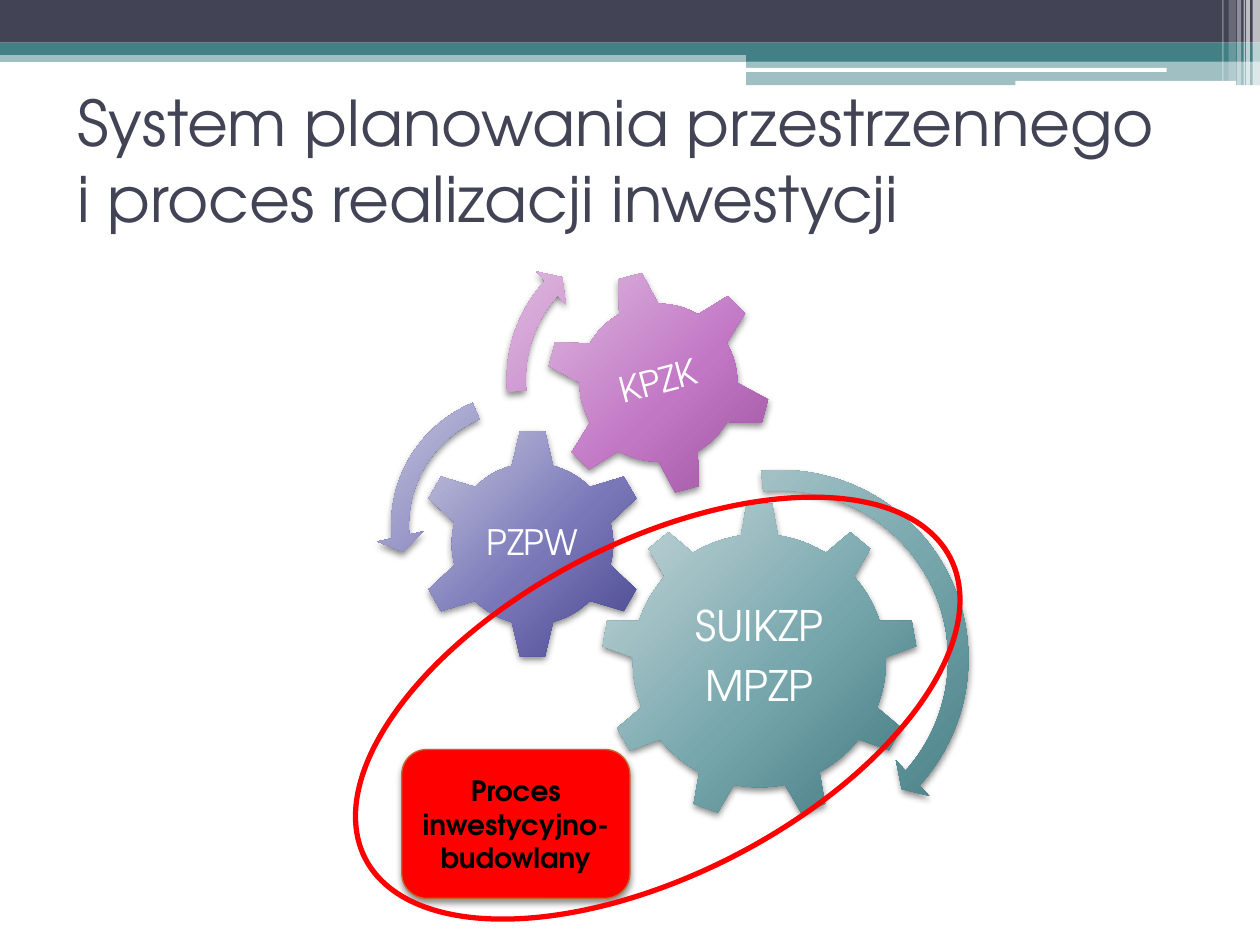
import pptx
import pptx.dml.color
import pptx.enum.shapes
import pptx.enum.text
import pptx.oxml
import pptx.oxml.ns
import pptx.util

Cm = pptx.util.Cm
Pt = pptx.util.Pt
SHAPE = pptx.enum.shapes.MSO_SHAPE
ALIGN = pptx.enum.text.PP_ALIGN
ANCHOR = pptx.enum.text.MSO_ANCHOR
FONT = "TeX Gyre Adventor"
TEAL = ("C7D7DA", "77A7AD", "3E777D")
VIOLET = ("C7C7DE", "7977B8", "45438A")
PINK = ("E2C6E3", "C277C5", "954898")


def rgb(color):
    """Return the colour of a hex string."""
    return pptx.dml.color.RGBColor.from_string(color)


def xml(body):
    """Parse a drawing element given without its namespace declaration."""
    tag, rest = body.split(" ", 1)
    return pptx.oxml.parse_xml(f"{tag} {pptx.oxml.ns.nsdecls('a')} {rest}")


def add_shape(slide, kind, x, y, w, h, fill=None, alpha=100, rotation=0):
    """Add a shape without line or shadow, with an optional solid fill."""
    sp = slide.shapes.add_shape(kind, Cm(x), Cm(y), Cm(w), Cm(h))
    sp.shadow.inherit = False
    sp.line.fill.background()
    sp.rotation = rotation
    if fill:
        sp.fill.solid()
        sp.fill.fore_color.rgb = rgb(fill)
        if alpha < 100:
            clr = sp._element.spPr.find(".//" + pptx.oxml.ns.qn("a:srgbClr"))
            clr.append(xml(f'<a:alpha val="{alpha * 1000}"/>'))
    return sp


def add_shadow(sp):
    """Give a shape a soft shadow below it."""
    effects = sp._element.spPr.find(pptx.oxml.ns.qn("a:effectLst"))
    effects.append(xml(
        '<a:outerShdw blurRad="50800" dist="25400" dir="5400000" rotWithShape="0">'
        '<a:srgbClr val="000000"><a:alpha val="45000"/></a:srgbClr></a:outerShdw>'))


def add_gradient(sp, colors):
    """Fill a shape with a three-stop gradient from its upper left."""
    stops = "".join(f'<a:gs pos="{pos}000"><a:srgbClr val="{c}"/></a:gs>'
                    for pos, c in zip((0, 55, 100), colors))
    geom = sp._element.spPr.find(pptx.oxml.ns.qn("a:prstGeom"))
    geom.addnext(xml(
        f'<a:gradFill rotWithShape="1"><a:gsLst>{stops}</a:gsLst><a:path path="circle">'
        '<a:fillToRect l="-40000" t="-90000" r="140000" b="190000"/></a:path></a:gradFill>'))


def set_text(sp, lines, size, color, bold=False):
    """Write centred paragraphs into a shape and return them."""
    tf = sp.text_frame
    tf.word_wrap = True
    tf.vertical_anchor = ANCHOR.MIDDLE
    tf.text = "\n".join(lines)
    for p in tf.paragraphs:
        p.alignment = ALIGN.CENTER
        p.font.name, p.font.size, p.font.bold = FONT, Pt(size), bold
        p.font.color.rgb = rgb(color)
    return tf.paragraphs


def add_header(slide, x, y, w):
    """Draw the header bands, the white bars and the stripes at the right end."""
    half = 15.04
    for dx, dy, bw, bh, color, alpha in (
            (0, 1.02, w, 0.23, "438086", 50),
            (0, 0, w, 0.86, "424456", 100),
            (0, 0.86, w, 0.25, "438086", 100),
            (half, 0.99, w - half, 0.25, "438086", 100),
            (half, 1.22, w - half, 0.5, "438086", 50)):
        add_shape(slide, SHAPE.RECTANGLE, x + dx, y + dy, bw, bh, color, alpha)
    for dx, dy, bw, bh in ((15.01, 1.37, 8.51, 0.08), (20.47, 1.63, 4.45, 0.1)):
        add_shape(slide, SHAPE.ROUNDED_RECTANGLE, x + dx, y + dy, bw, bh, "FFFFFF")
    for dx, sw, sh, alpha in (
            (25.25, 0.15, 1.73, 65), (25.12, 0.08, 1.73, 65), (25.07, 0.03, 1.73, 60),
            (24.94, 0.08, 1.73, 40), (24.77, 0.15, 1.63, 20), (24.64, 0.03, 1.63, 30)):
        add_shape(slide, SHAPE.RECTANGLE, x + dx, y, sw, sh, "FFFFFF", alpha)


def add_title(slide, x, y, w, h):
    """Place and format the title placeholder."""
    s = slide.shapes.title
    s.left, s.top, s.width, s.height = Cm(x), Cm(y), Cm(w), Cm(h)
    tf = s.text_frame
    tf.text = "System planowania przestrzennego \vi proces realizacji inwestycji"
    tf.auto_size = pptx.enum.text.MSO_AUTO_SIZE.NONE
    tf.vertical_anchor = ANCHOR.MIDDLE
    p = tf.paragraphs[0]
    p.alignment = ALIGN.LEFT
    p.font.name, p.font.size = FONT, Pt(36)
    p.font.color.rgb = rgb("424456")


def add_gears(slide, x, y):
    """Draw the three meshing gears and their turning arrows."""
    for kind, dx, dy, size, colors, rotation, lines, points in (
            (SHAPE.GEAR_9, 4.53, 5.68, 6.38, TEAL, 0, ["SUIKZP", "MPZP"], 24),
            (SHAPE.GEAR_6, 0.82, 4.19, 4.65, VIOLET, 0, ["PZPW"], 20),
            (SHAPE.GEAR_6, 3.41, 0.99, 4.55, PINK, 345, ["KPZK"], 20)):
        sp = add_shape(slide, kind, x + dx, y + dy, size, size, rotation=rotation)
        add_gradient(sp, colors)
        add_shadow(sp)
        tf = sp.text_frame
        tf.margin_left = tf.margin_right = tf.margin_top = tf.margin_bottom = Cm(0.08)
        for p in set_text(sp, lines, points, "FFFFFF"):
            p.line_spacing = 0.9
            p.space_after = Pt(0.35 * points)
    for kind, dx, dy, size, colors, adjustments in (
            (SHAPE.CIRCULAR_ARROW, 4.04, 4.74, 8.18, TEAL,
             (0.05, 2.99, 25.16, 158.62, 0.06)),
            (SHAPE.LEFT_CIRCULAR_ARROW, 0, 3.17, 5.94, VIOLET,
             (0.06, 4.3, 104.89, 148.38, 0.08)),
            (SHAPE.CIRCULAR_ARROW, 2.37, 0, 6.4, PINK,
             (0.06, 3.94, 133.14, 105.08, 0.07))):
        sp = add_shape(slide, kind, x + dx, y + dy, size, size)
        for i, value in enumerate(adjustments):
            sp.adjustments[i] = value
        add_gradient(sp, colors)
        add_shadow(sp)


def add_process(slide, x, y):
    """Draw the process box and the tilted ellipse that ties it to the local plans."""
    sp = add_shape(slide, SHAPE.ROUNDED_RECTANGLE, x + 1.47, y + 4.19, 4.6, 3, "FF0000")
    sp.line.color.rgb = rgb("C4652D")
    sp.line.width = Pt(0.75)
    add_shadow(sp)
    set_text(sp, ["Proces inwestycyjno-budowlany"], 16, "000000", True)
    sp = add_shape(slide, SHAPE.OVAL, x, y, 13.26, 6.71, rotation=332.8)
    sp.fill.background()
    sp.line.color.rgb = rgb("FF0000")
    sp.line.width = Pt(3)


def main():
    """Build the slide and save it."""
    prs = pptx.Presentation()
    prs.slide_width, prs.slide_height = Cm(25.4), Cm(19.05)
    slide = prs.slides.add_slide(prs.slide_layouts[5])
    add_header(slide, 0, 0, 25.4)
    add_title(slide, 1.3, 1.73, 22.86, 2.97)
    add_gears(slide, 7.59, 4.45)
    add_process(slide, 6.63, 10.92)
    prs.save("out.pptx")


if __name__ == "__main__":
    main()
